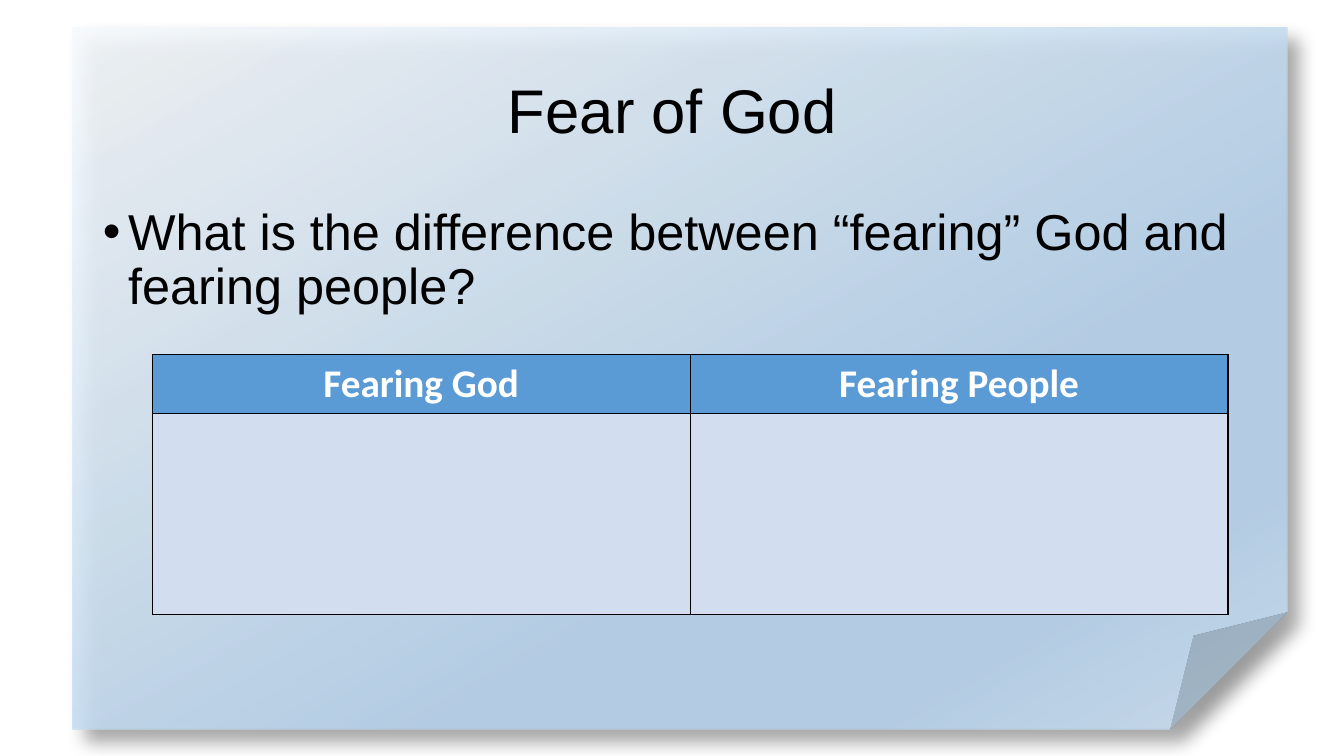
import pptx
import pptx.dml.color
import pptx.enum.shapes
import pptx.enum.text
import pptx.oxml
import pptx.oxml.ns
import pptx.util
from dataclasses import dataclass

Inches = pptx.util.Inches
Pt = pptx.util.Pt
NS = pptx.oxml.ns.nsdecls("a")


@dataclass(frozen=True)
class Theme:
    text: str = "000000"
    header_text: str = "FFFFFF"
    header_fill: str = "5B9BD5"
    answer_fill: str = "D2DEEF"
    border: str = "000000"
    # Paper gradient: position in percent, colour
    paper: tuple = ((0, "F7FAFD"), (64, "B5D2EC"), (83, "B5D2EC"), (100, "CEE1F2"))
    paper_opacity: int = 87
    text_font: str = "Arial"
    table_font: str = "Calibri"
    title_size: int = 44
    question_size: int = 36
    header_size: int = 28


THEME = Theme()


def rgb(colour):
    return pptx.dml.color.RGBColor.from_string(colour)


def style_font(font, name, size, colour, bold=False):
    font.name, font.size, font.bold = name, Pt(size), bold
    font.color.rgb = rgb(colour)


def place(part, box):
    part.left, part.top, part.width, part.height = (Inches(n) for n in box)


# Sheet of paper with a turned-up corner, behind everything else
def add_paper(slide, box):
    paper = slide.shapes.add_shape(
        pptx.enum.shapes.MSO_SHAPE.FOLDED_CORNER, *(Inches(n) for n in box))
    paper.line.fill.background()
    paper.shadow.inherit = False
    paper.fill.gradient()
    stops = "".join(
        f'<a:gs pos="{position * 1000}"><a:srgbClr val="{colour}">'
        f'<a:alpha val="{THEME.paper_opacity * 1000}"/></a:srgbClr></a:gs>'
        for position, colour in THEME.paper)
    properties = paper.element.spPr
    properties.replace(
        properties.find(pptx.oxml.ns.qn("a:gradFill")),
        pptx.oxml.parse_xml(
            f'<a:gradFill {NS} rotWithShape="1"><a:gsLst>{stops}</a:gsLst>'
            '<a:lin ang="3600000" scaled="0"/></a:gradFill>'))
    properties.find(pptx.oxml.ns.qn("a:effectLst")).append(
        pptx.oxml.parse_xml(
            f'<a:outerShdw {NS} blurRad="{Pt(13)}" dist="{Pt(13)}" dir="2700000"'
            ' algn="tl" rotWithShape="0"><a:srgbClr val="000000">'
            '<a:alpha val="40000"/></a:srgbClr></a:outerShdw>'))
    slide.shapes.element.insert(2, paper.element)


# Title line
def add_title(slide, box, wording):
    title = slide.shapes.title
    place(title, box)
    frame = title.text_frame
    frame.text = wording
    frame.auto_size = pptx.enum.text.MSO_AUTO_SIZE.NONE
    frame.vertical_anchor = pptx.enum.text.MSO_ANCHOR.MIDDLE
    heading = frame.paragraphs[0]
    heading.alignment = pptx.enum.text.PP_ALIGN.CENTER
    heading.line_spacing = 0.9
    style_font(heading.runs[0].font, THEME.text_font, THEME.title_size, THEME.text)


# Bulleted question
def add_question(slide, box, wording):
    body = slide.placeholders[1]
    place(body, box)
    frame = body.text_frame
    frame.text = wording
    frame.auto_size = pptx.enum.text.MSO_AUTO_SIZE.NONE
    frame.vertical_anchor = pptx.enum.text.MSO_ANCHOR.TOP
    question = frame.paragraphs[0]
    properties = question._p.get_or_add_pPr()
    properties.set("marL", str(Inches(0.25)))
    properties.set("indent", str(-Inches(0.25)))
    properties.append(pptx.oxml.parse_xml(f'<a:buFont {NS} typeface="Arial"/>'))
    properties.append(pptx.oxml.parse_xml(f'<a:buChar {NS} char="•"/>'))
    question.line_spacing = 0.9
    question.space_before = Pt(0)
    style_font(question.runs[0].font, THEME.text_font, THEME.question_size, THEME.text)


def fill_cell(cell, colour):
    properties = cell._tc.get_or_add_tcPr()
    for side in ("lnL", "lnR", "lnT", "lnB"):
        properties.append(pptx.oxml.parse_xml(
            f'<a:{side} {NS} w="{Pt(1)}"><a:solidFill>'
            f'<a:srgbClr val="{THEME.border}"/></a:solidFill></a:{side}>'))
    cell.fill.solid()
    cell.fill.fore_color.rgb = rgb(colour)


# Comparison table: headings over empty answer cells
def add_comparison(slide, box, headings, header_height):
    left, top, width, height = box
    comparison = slide.shapes.add_table(
        2, len(headings), *(Inches(n) for n in box)).table
    comparison.rows[0].height = Inches(header_height)
    comparison.rows[1].height = Inches(height - header_height)
    for column, wording in enumerate(headings):
        comparison.columns[column].width = Inches(width / len(headings))
        header = comparison.cell(0, column)
        fill_cell(header, THEME.header_fill)
        fill_cell(comparison.cell(1, column), THEME.answer_fill)
        header.text_frame.text = wording
        heading = header.text_frame.paragraphs[0]
        heading.alignment = pptx.enum.text.PP_ALIGN.CENTER
        style_font(heading.runs[0].font, THEME.table_font, THEME.header_size,
                   THEME.header_text, bold=True)


def add_fear_slide(deck, box):
    left, top, width, height = box
    slide = deck.slides.add_slide(deck.slide_layouts[1])
    text_left, text_width = left + 0.2, width - 0.55
    add_paper(slide, box)
    add_title(slide, (text_left, top + 0.13, text_width, 1.45), "Fear of God")
    add_question(
        slide, (text_left, top + 1.73, text_width, 4.76 - 3.3),
        "What is the difference between “fearing” God and fearing people?")
    add_comparison(slide, (left + 0.79, top + 3.25, 10.67, 2.58),
                   ("Fearing God", "Fearing People"), 0.58)


def main():
    deck = pptx.Presentation()
    deck.slide_width, deck.slide_height = Inches(13.33), Inches(7.5)
    add_fear_slide(deck, (0.72, 0.27, 12.05, 6.97))
    deck.save("out.pptx")


if __name__ == "__main__":
    main()
